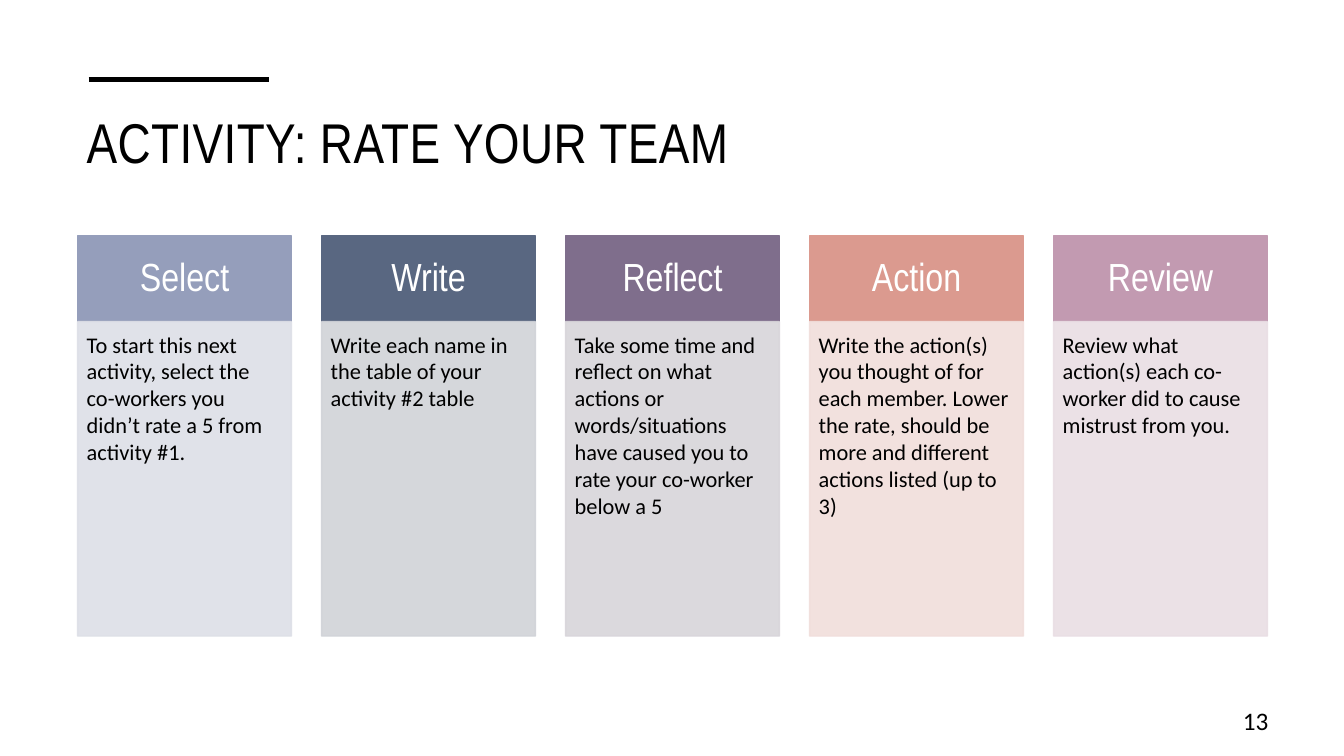
from lxml.etree import SubElement
from pptx import Presentation
from pptx.dml.color import RGBColor
from pptx.enum.shapes import MSO_CONNECTOR as Connector, MSO_SHAPE as Shape
from pptx.enum.text import MSO_ANCHOR as Anchor, MSO_AUTO_SIZE as AutoSize, PP_ALIGN as Align
from pptx.oxml.ns import qn
from pptx.util import Inches, Pt

HEADING_FONT, BODY_FONT = "Arial Narrow", "Calibri"
BLACK, WHITE = "000000", "FFFFFF"

STEPS = [
    ("Select", "959EBB", "DDDFE7",
     "To start this next activity, select the co-workers you didn’t rate a 5 from activity #1."),
    ("Write", "596781", "D1D3D8",
     "Write each name in the table of your activity #2 table"),
    ("Reflect", "7F6E8C", "D8D5DA",
     "Take some time and reflect on what actions or words/situations have caused you "
     "to rate your co-worker below a 5"),
    ("Action", "DB9A8F", "F1DEDB",
     "Write the action(s) you thought of for each member. Lower the rate, should be more "
     "and different actions listed (up to 3)"),
    ("Review", "C29AB1", "E9DEE4",
     "Review what action(s) each co-worker did to cause mistrust from you."),
]
STEP_LEFT, STEP_PITCH, STEP_WIDTH = 0.77, 2.42, 2.12
HEADER_TOP, HEADER_HEIGHT, PANEL_HEIGHT = 2.34, 0.85, 3.12


def color(value):
    return RGBColor.from_string(value)


def write(shape, text, size, font=BODY_FONT, ink=BLACK, align=Align.LEFT, anchor=Anchor.TOP,
          insets=(0.1, 0.05, 0.1, 0.05), line_spacing=1.0, tracking=None):
    """Put one formatted paragraph in a shape; insets run left, top, right, bottom."""
    frame = shape.text_frame
    frame.word_wrap = True
    frame.auto_size = AutoSize.NONE
    frame.vertical_anchor = anchor
    (frame.margin_left, frame.margin_top,
     frame.margin_right, frame.margin_bottom) = map(Inches, insets)
    para = frame.paragraphs[0]
    para.alignment = align
    para.line_spacing = line_spacing
    span = para.add_run()
    span.text = text
    span.font.name = font
    span.font.size = Pt(size)
    span.font.color.rgb = color(ink)
    if tracking is not None:
        span.font._element.set("spc", str(round(tracking * 100)))


class Page:
    def __init__(self, deck):
        self.slide = deck.slides.add_slide(deck.slide_layouts[5])
        self.shapes = self.slide.shapes

    def rule(self, left, right, top, weight):
        line = self.shapes.add_connector(
            Connector.STRAIGHT, Inches(left), Inches(top), Inches(right), Inches(top))
        line.line.color.rgb = color(BLACK)
        line.line.width = Pt(weight)
        SubElement(line._element.spPr, qn("a:effectLst"))

    def title(self, text, *place):
        title = self.shapes.title
        title.left, title.top, title.width, title.height = map(Inches, place)
        write(title, text, 40, font=HEADING_FONT, insets=(0.1, 0.1, 0.1, 0.05), tracking=0.3)

    def block(self, place, fill, opacity=100):
        box = self.shapes.add_shape(Shape.RECTANGLE, *map(Inches, place))
        box.shadow.inherit = False
        box.fill.solid()
        box.fill.fore_color.rgb = color(fill)
        box.line.color.rgb = color(fill)
        box.line.width = Pt(1)
        if opacity < 100:
            for tint in box._element.spPr.iter(qn("a:srgbClr")):
                SubElement(tint, qn("a:alpha"), val=str(opacity * 1000))
        return box

    def step(self, left, name, header_fill, panel_fill, text):
        header = self.block((left, HEADER_TOP, STEP_WIDTH, HEADER_HEIGHT), header_fill)
        write(header, name, 28, font=HEADING_FONT, ink=WHITE, align=Align.CENTER,
              anchor=Anchor.MIDDLE, insets=(0.22, 0.12, 0.22, 0.12), line_spacing=0.9)
        panel = self.block((left, HEADER_TOP + HEADER_HEIGHT, STEP_WIDTH, PANEL_HEIGHT),
                           panel_fill, opacity=90)
        write(panel, text, 16, insets=(0.09, 0.09, 0.12, 0.14))

    def number(self, text, *place):
        box = self.shapes.add_textbox(*map(Inches, place))
        write(box, text, 18, align=Align.RIGHT, anchor=Anchor.MIDDLE)


def main():
    deck = Presentation()
    deck.slide_width, deck.slide_height = Inches(13.33), Inches(7.5)
    page = Page(deck)
    page.rule(0.88, 2.67, 0.79, 3.5)
    page.title("ACTIVITY: RATE YOUR TEAM", 0.76, 0.97, 11.81, 1.15)
    for index, step in enumerate(STEPS):
        page.step(STEP_LEFT + index * STEP_PITCH, *step)
    page.number("13", 11.94, 6.95, 0.74, 0.4)
    deck.save("out.pptx")


if __name__ == "__main__":
    main()
